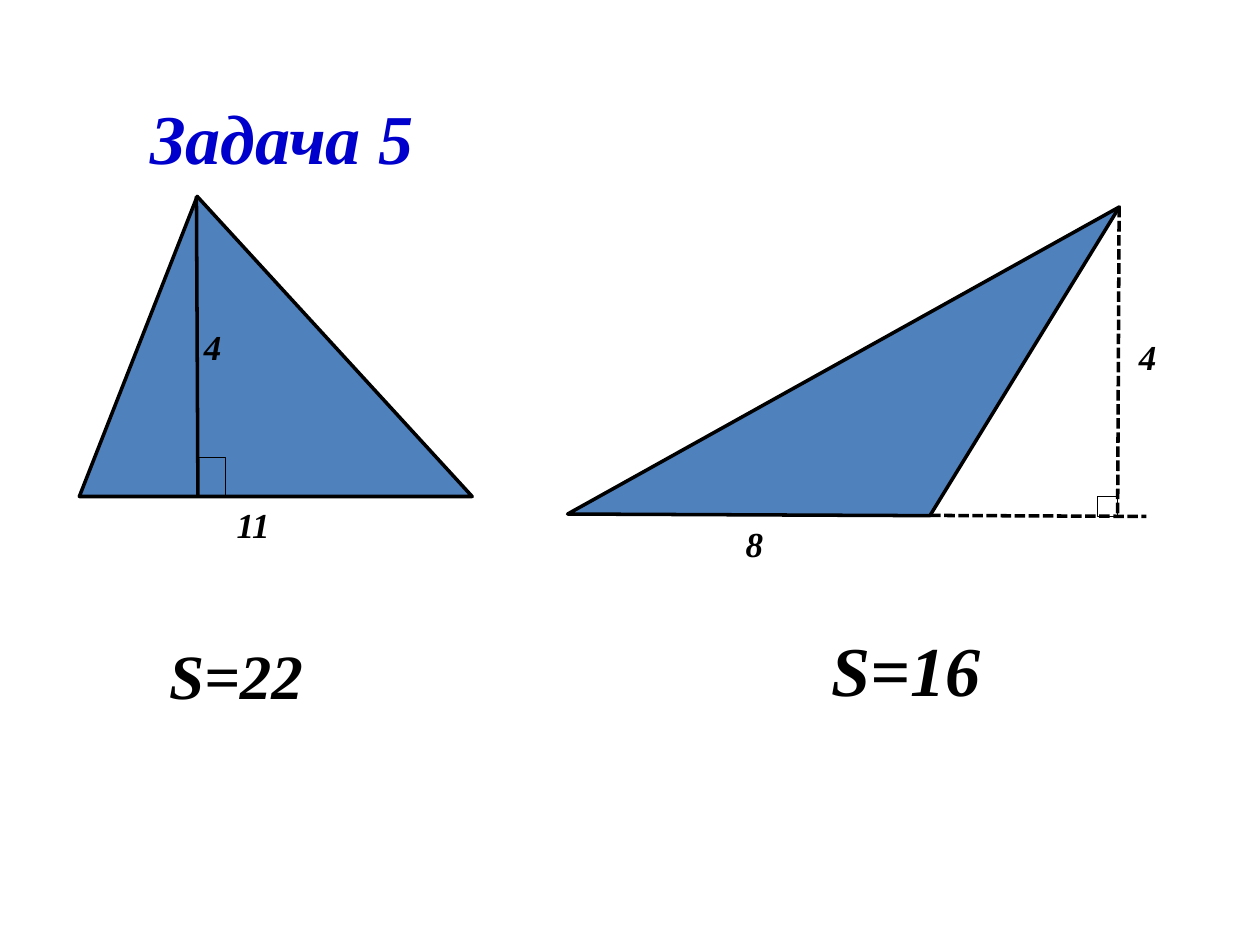
"""Build a slide with two triangles, their heights and their areas."""
from lxml import etree
from pptx import Presentation
from pptx.dml.color import RGBColor
from pptx.enum.dml import MSO_LINE
from pptx.enum.shapes import MSO_CONNECTOR, MSO_SHAPE
from pptx.enum.text import MSO_ANCHOR, MSO_AUTO_SIZE, PP_ALIGN
from pptx.oxml.ns import qn
from pptx.util import Cm, Pt

LEFT, CENTER = PP_ALIGN.LEFT, PP_ALIGN.CENTER
TOP = MSO_ANCHOR.TOP
NO_FIT = MSO_AUTO_SIZE.NONE
TRIANGLE, RECTANGLE = MSO_SHAPE.ISOSCELES_TRIANGLE, MSO_SHAPE.RECTANGLE
STRAIGHT = MSO_CONNECTOR.STRAIGHT
DASHED = MSO_LINE.SQUARE_DOT
FONT = "Times New Roman"
BLACK, BLUE, TITLE_BLUE = "000000", "4F81BD", "0000CC"

TITLE = ("Задача 5", (2.77, 1.78, 7.34, 1.96))
TRIANGLES = [
    ((1.6, 3.96, 7.92, 6.05), 0.3, 0),
    ((11.51, 7.04, 12.73, 3.58), 0.5, 150.9),
]
LINES = [
    ((3.96, 3.96, 3.99, 10.01), None),
    ((18.75, 10.39, 23.11, 10.41), DASHED),
    ((22.56, 4.17, 22.53, 10.41), DASHED),
]
RIGHT_ANGLES = [(3.99, 9.22, 0.56, 0.79), (22.12, 10.01, 0.41, 0.41)]
LABELS = [
    ("11", (4.52, 10.03, 1.75, 1.68), 20, LEFT),
    ("4", (3.86, 6.43, 1.75, 1.68), 20, LEFT),
    ("8", (14.78, 10.41, 1.4, 1.12), 20, LEFT),
    ("4", (22.71, 6.63, 1.4, 1.12), 20, LEFT),
    ("S=22", (2.18, 12.7, 5.16, 1.8), 36, CENTER),
    ("S=16", (15.29, 12.5, 5.94, 1.96), 40, CENTER),
]


def lengths(values):
    return [Cm(value) for value in values]


def paint(target, color):
    if hasattr(target, "solid"):
        target.solid()
        target.fore_color.rgb = RGBColor.from_string(color)
    else:
        target.color.rgb = RGBColor.from_string(color)


def write(box, text, size=20, color=BLACK, align=LEFT):
    frame = box.text_frame
    frame.word_wrap = True
    frame.auto_size = NO_FIT
    frame.vertical_anchor = TOP
    para = frame.paragraphs[0]
    para.alignment = align
    span = para.add_run()
    span.text = text
    span.font.name = FONT
    span.font.size = Pt(size)
    span.font.bold = span.font.italic = True
    paint(span.font, color)


def add_figure(page, kind, place, fill=None, width=0.75):
    figure = page.shapes.add_shape(kind, *lengths(place))
    figure.shadow.inherit = False
    if fill:
        paint(figure.fill, fill)
    else:
        figure.fill.background()
    paint(figure.line, BLACK)
    figure.line.width = Pt(width)
    return figure


def add_line(page, ends, dash):
    line = page.shapes.add_connector(STRAIGHT, *lengths(ends))
    paint(line.line, BLACK)
    line.line.width = Pt(2)
    if dash:
        line.line.dash_style = dash
    etree.SubElement(line._element.spPr, qn("a:effectLst"))


def main():
    deck = Presentation()
    deck.slide_width, deck.slide_height = Cm(25.4), Cm(19.05)
    page = deck.slides.add_slide(deck.slide_layouts.get_by_name("Title Only"))

    title, place = TITLE
    heading = page.shapes.title
    heading.left, heading.top, heading.width, heading.height = lengths(place)
    write(heading, title, size=40, color=TITLE_BLUE)

    for place, apex, turn in TRIANGLES:
        triangle = add_figure(page, TRIANGLE, place, fill=BLUE, width=2)
        triangle.adjustments[0] = apex
        triangle.rotation = turn
    for ends, dash in LINES:
        add_line(page, ends, dash)
    for place in RIGHT_ANGLES:
        add_figure(page, RECTANGLE, place)
    for text, place, size, align in LABELS:
        box = page.shapes.add_textbox(*lengths(place))
        write(box, text, size=size, align=align)

    deck.save("out.pptx")


if __name__ == "__main__":
    main()
